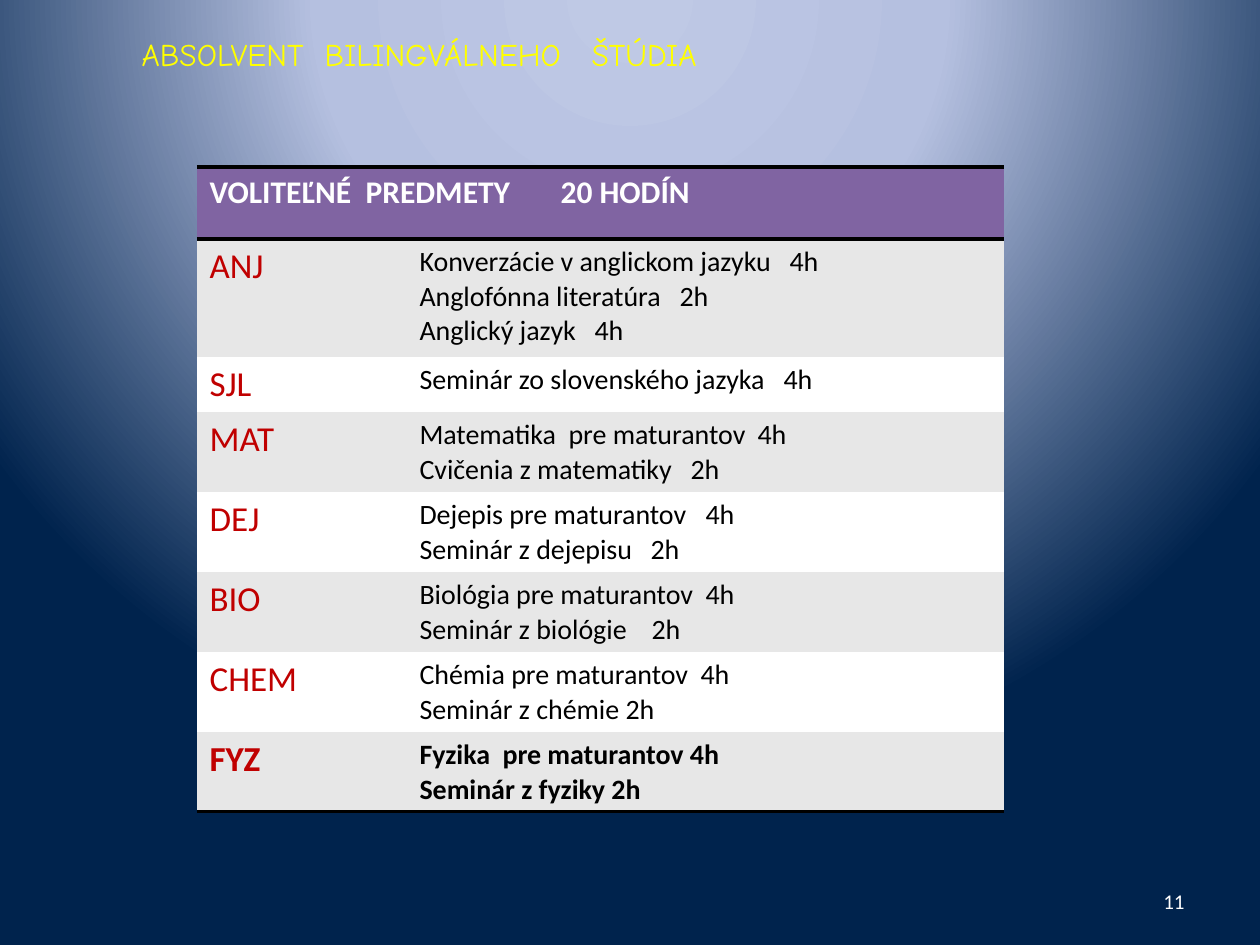
from lxml import etree
from pptx import Presentation
from pptx.dml.color import RGBColor
from pptx.enum.text import MSO_ANCHOR as Anchor, PP_ALIGN as Align
from pptx.oxml import parse_xml
from pptx.oxml.ns import nsdecls, qn
from pptx.util import Pt

PX = 914400 / 126
NO_STYLE = "{2D5ABB26-0587-4C30-8999-92F81FD0307C}"
TITLE = ("ABSOLVENT\tBILINGVÁLNEHO\tŠTÚDIA", 183, 450)
HEAD = ("VOLITEĽNÉ\tPREDMETY\t20 HODÍN", 156, 351)
ROWS = [
    ("ANJ", 118, [("Konverzácie v anglickom jazyku\t4h", 370),
                  ("Anglofónna literatúra\t2h", 260),
                  ("Anglický jazyk\t4h", 175)]),
    ("SJL", 55, [("Seminár zo slovenského jazyka\t4h", 364)]),
    ("MAT", 80, [("Matematika\tpre maturantov\t4h", 149, 338),
                 ("Cvičenia z matematiky\t2h", 271)]),
    ("DEJ", 80, [("Dejepis pre maturantov\t4h", 286),
                 ("Seminár z dejepisu\t2h", 231)]),
    ("BIO", 80, [("Biológia pre maturantov\t4h", 286),
                 ("Seminár z biológie\t2h", 232)]),
    ("CHEM", 80, [("Chémia pre maturantov\t4h", 281),
                  ("Seminár z chémie 2h",)]),
    ("FYZ", 80, [("Fyzika\tpre maturantov 4h", 83),
                 ("Seminár z fyziky 2h",)]),
]


def px(n):
    return round(n * PX)


def rgb(code):
    return RGBColor.from_string(code)


def write(frame, lines, size, color, bold=False, face="Calibri", align=Align.LEFT):
    for i, (text, *stops) in enumerate(lines):
        par = frame.add_paragraph() if i else frame.paragraphs[0]
        par.text = text
        par.alignment = align
        if stops:
            tabs = etree.SubElement(par._p.get_or_add_pPr(), qn("a:tabLst"))
            for stop in stops:
                etree.SubElement(tabs, qn("a:tab"), pos=str(px(stop)), algn="l")
        font = par.font
        font.size, font.bold, font.name = Pt(size), bold, face
        font.color.rgb = rgb(color)


def place(shape, x, y, w, h):
    shape.left, shape.top, shape.width, shape.height = map(px, (x, y, w, h))


def paint(slide):
    stops = "".join(
        f'<a:gs pos="{pos}000"><a:srgbClr val="{code}"/></a:gs>'
        for pos, code in ((0, "BFC9E5"), (40, "B5C0E0"), (100, "00234D")))
    back = parse_xml(
        f'<p:bg {nsdecls("p", "a")}><p:bgPr><a:gradFill rotWithShape="1">'
        f'<a:gsLst>{stops}</a:gsLst><a:path path="circle">'
        '<a:fillToRect l="50000" t="-80000" r="50000" b="180000"/></a:path>'
        '</a:gradFill><a:effectLst/></p:bgPr></p:bg>')
    slide.element.cSld.insert(0, back)


def add_title(slide, x, y, w, h):
    title = slide.shapes.title
    place(title, x, y, w, h)
    title.text_frame.vertical_anchor = Anchor.TOP
    write(title.text_frame, [TITLE], 18, "FFFF00", face="Comic Neue")


def rule(cell, *sides):
    props = cell._tc.get_or_add_tcPr()
    for i, side in enumerate(sides):
        props.insert(i, parse_xml(
            f'<a:{side} {nsdecls("a")} w="25400"><a:solidFill>'
            f'<a:srgbClr val="000000"/></a:solidFill></a:{side}>'))


def shade(cell, code):
    cell.fill.solid()
    cell.fill.fore_color.rgb = rgb(code)


def add_grid(slide, x, y, w, h):
    table = slide.shapes.add_table(len(ROWS) + 1, 2, *map(px, (x, y, w, h))).table
    table._tbl.tblPr.find(qn("a:tableStyleId")).text = NO_STYLE
    table.first_row = table.horz_banding = False
    table.columns[0].width = px(210)
    table.columns[1].width = px(w - 210)
    table.rows[0].height = px(h - sum(row[1] for row in ROWS))
    head = table.cell(0, 0)
    head.merge(table.cell(0, 1))
    write(head.text_frame, [HEAD], 18, "FFFFFF", True)
    for cell in table.rows[0].cells:
        shade(cell, "8064A2")
        rule(cell, "lnT", "lnB")
    for i, (code, high, lines) in enumerate(ROWS, 1):
        last = i == len(ROWS)
        table.rows[i].height = px(high)
        left, right = table.rows[i].cells
        write(left.text_frame, [(code,)], 20, "C00000", last)
        write(right.text_frame, lines, 16, "000000", last)
        for cell in (left, right):
            shade(cell, "E7E7E7" if i % 2 else "FFFFFF")
            if last:
                rule(cell, "lnB")


def add_number(slide, x, y, w, h):
    frame = slide.shapes.add_textbox(*map(px, (x, y, w, h))).text_frame
    frame.word_wrap = True
    frame.vertical_anchor = Anchor.MIDDLE
    write(frame, [("11",)], 12, "FFFFFF", align=Align.RIGHT)


def main():
    deck = Presentation()
    deck.slide_width, deck.slide_height = px(1260), px(945)
    slide = deck.slides.add_slide(deck.slide_layouts[5])
    paint(slide)
    add_number(slide, 903, 876, 294, 50)
    add_grid(slide, 197, 167, 807, 645)
    add_title(slide, 129, 29, 935, 50)
    deck.save("out.pptx")


if __name__ == "__main__":
    main()
